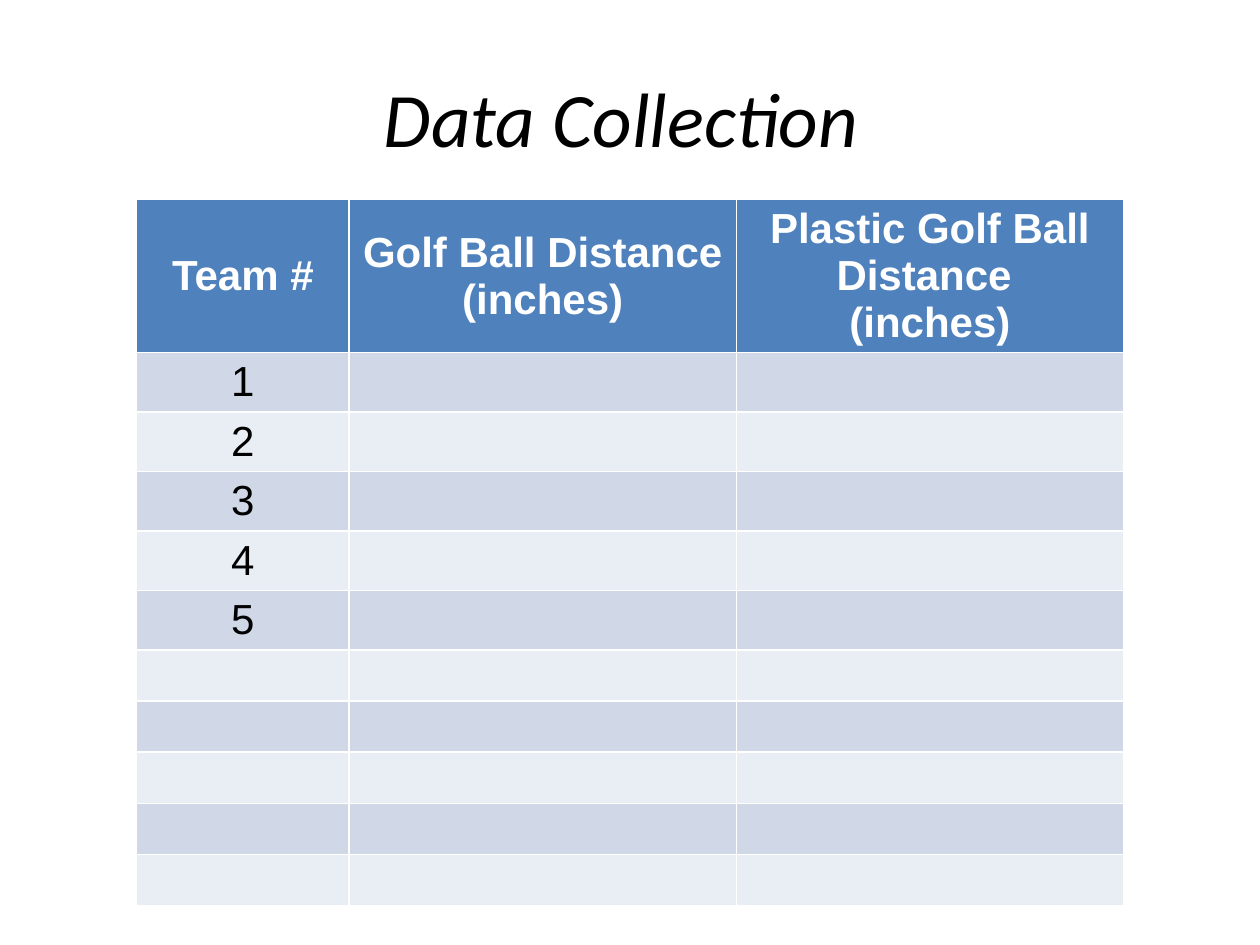
from pptx import Presentation
from pptx.dml.color import RGBColor
from pptx.enum.text import MSO_ANCHOR, PP_ALIGN
from pptx.util import Pt

MID = MSO_ANCHOR.MIDDLE
CENTER = PP_ALIGN.CENTER
BLACK = RGBColor(0x00, 0x00, 0x00)
WHITE = RGBColor(0xFF, 0xFF, 0xFF)
BLUE = RGBColor(0x4F, 0x81, 0xBD)
BANDS = [RGBColor(0xE9, 0xED, 0xF4), RGBColor(0xD0, 0xD8, 0xE8)]

TITLE = {"name": "Calibri", "size": Pt(44), "italic": True, "bold": False}
HEAD = {"name": "Arial", "size": Pt(24), "bold": True}
BODY = {"name": "Arial", "size": Pt(24), "bold": False}


def write(frame, text, style, color):
    frame.text = text
    for para in frame.paragraphs:
        para.alignment = CENTER
        for run in para.runs:
            for key, value in style.items():
                setattr(run.font, key, value)
            run.font.color.rgb = color


deck = Presentation()
deck.slide_width, deck.slide_height = Pt(720), Pt(540)
slide = deck.slides.add_slide(deck.slide_layouts[5])

title = slide.shapes.title
box = {"left": 36, "top": 21.6, "width": 648, "height": 90}
for key, value in box.items():
    setattr(title, key, Pt(value))
title.text_frame.vertical_anchor = MID
write(title.text_frame, "Data Collection ", TITLE, BLACK)

heads = ["Team #", "Golf Ball Distance \n(inches)", "Plastic Golf Ball Distance \n(inches)"]
teams = 5
rows = [heads] + [[str(n) if n <= teams else "", "", ""] for n in range(1, 11)]
widths = [121.5, 221.25, 221.25]
high = 29.2

table = slide.shapes.add_table(
    len(rows), len(widths), Pt(78), Pt(114), Pt(sum(widths)), Pt(high * len(rows))
).table
for col, width in zip(table.columns, widths):
    col.width = Pt(width)

for r, row in enumerate(rows):
    table.rows[r].height = Pt(high)
    for c, text in enumerate(row):
        cell = table.cell(r, c)
        cell.fill.solid()
        cell.fill.fore_color.rgb = BANDS[r % 2] if r else BLUE
        cell.vertical_anchor = MID
        if text:
            write(cell.text_frame, text, BODY if r else HEAD, BLACK if r else WHITE)

deck.save("out.pptx")
